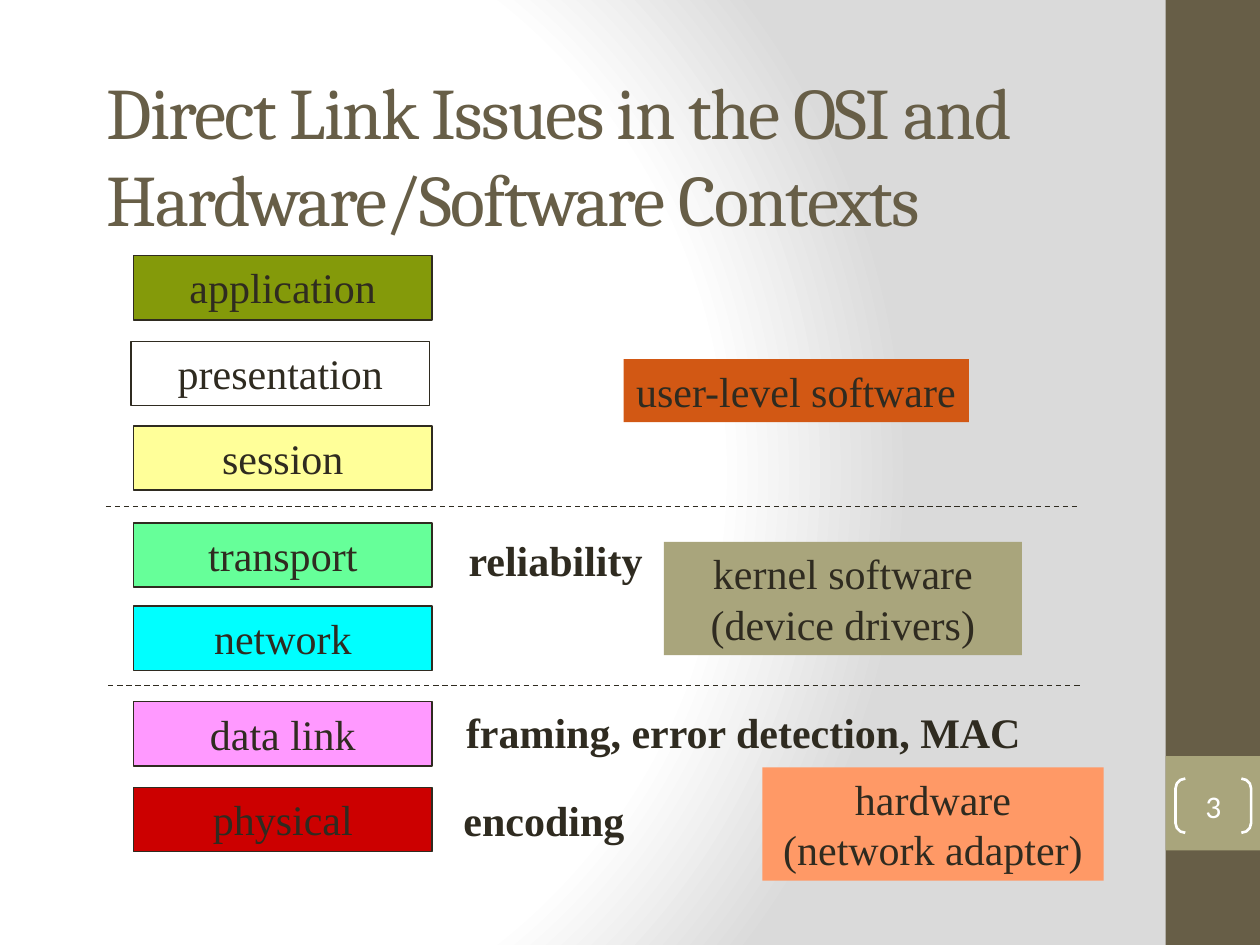
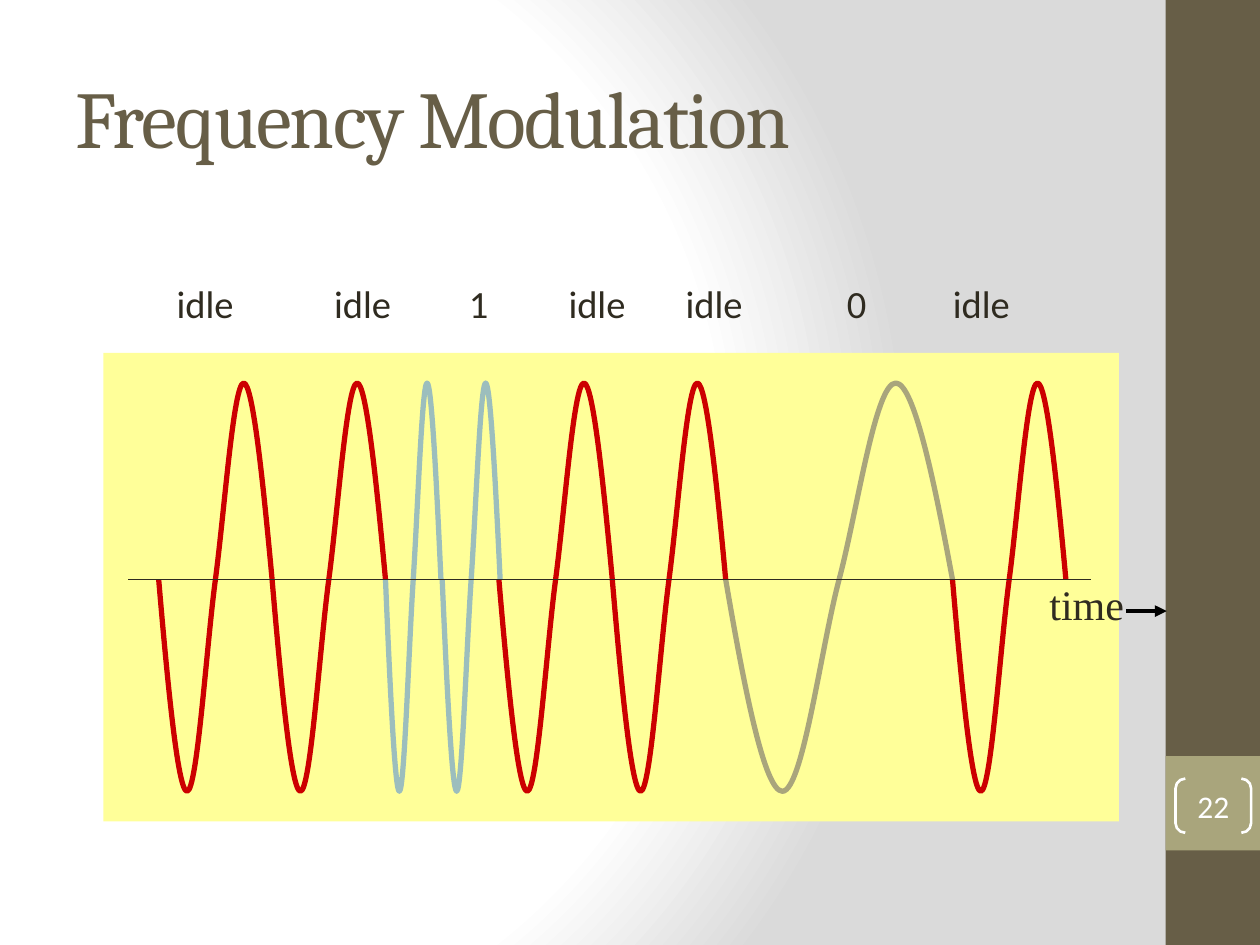
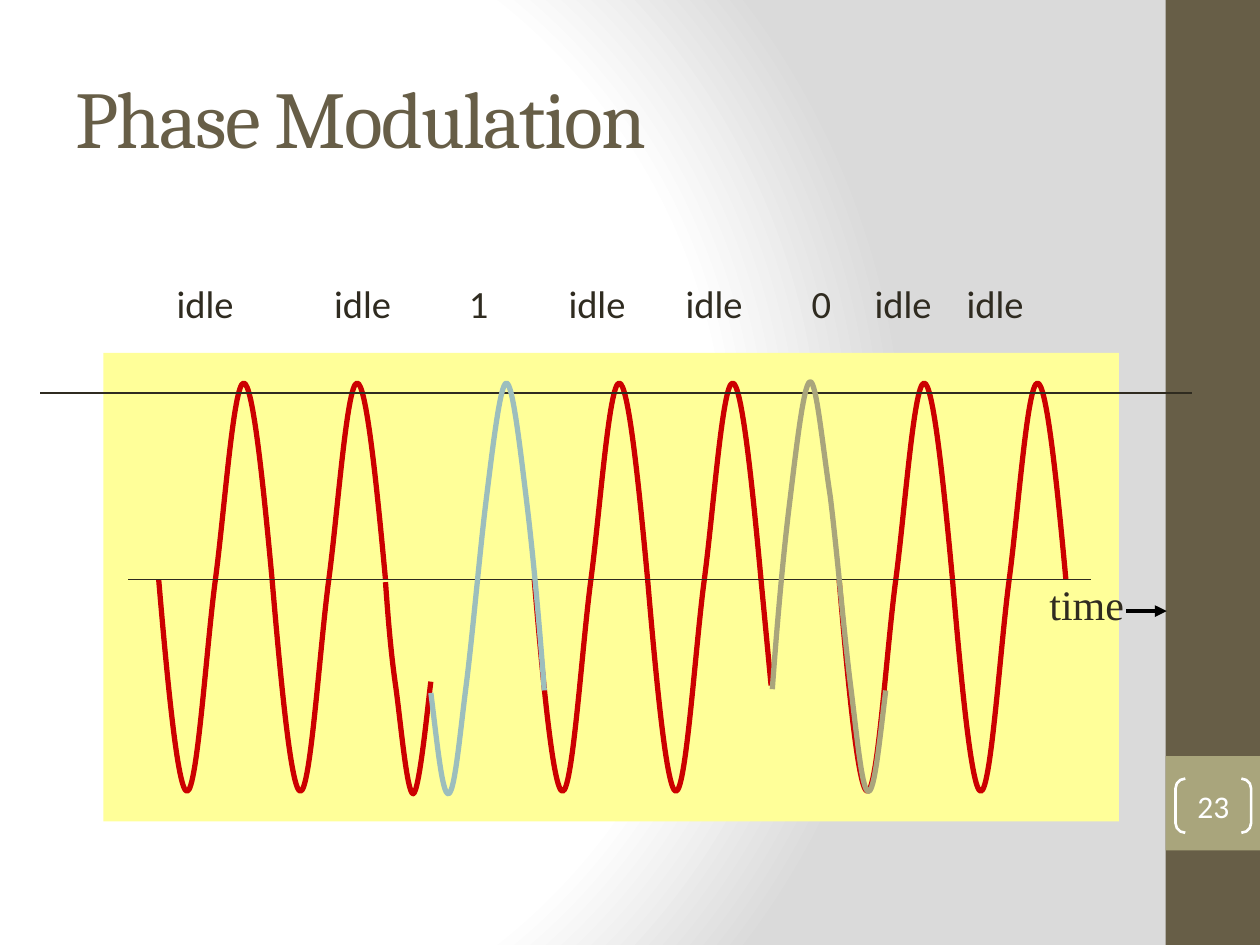
from lxml.etree import SubElement
from pptx import Presentation
from pptx.dml.color import RGBColor
from pptx.enum.dml import MSO_LINE
from pptx.enum.shapes import MSO_CONNECTOR, MSO_SHAPE
from pptx.enum.text import MSO_ANCHOR, MSO_AUTO_SIZE, PP_ALIGN
from pptx.oxml import parse_xml
from pptx.oxml.ns import nsdecls, qn
from pptx.util import Inches, Pt

# Shared colours and fonts
INK, BROWN, OLIVE, WHITE, BLACK = "2F2B20", "675E47", "A9A57C", "FFFFFF", "000000"
RED, BLUE, YELLOW = "CC0000", "9CBEBD", "FFFF99"
SERIF, SANS, HEAD = "Times New Roman", "Calibri", "Cambria"
GLOW = [(0, WHITE), (75, WHITE), (100, "DADADA")]

# Slide 1: layers (name, left, top, fill), contexts, issues, dividers
LAYERS = [
    ("transport", 1.06, 4.15, "66FF99"),
    ("network", 1.06, 4.81, "00FFFF"),
    ("data link", 1.06, 5.57, "FF99FF"),
    ("physical", 1.06, 6.25, RED),
    ("session", 1.06, 3.38, YELLOW),
    ("presentation", 1.04, 2.71, None),
    ("application", 1.06, 2.03, "849A0A"),
]
HOSTS = [
    ("kernel software (device drivers)", (5.27, 4.3, 2.84, 0.9), OLIVE),
    ("hardware (network adapter)", (6.05, 6.09, 2.71, 0.9), "FF9966"),
]
ISSUES = [
    ("reliability", (3.62, 4.19, 1.59, 0.5)),
    ("framing, error detection, MAC", (3.6, 5.56, 4.61, 0.5)),
    ("encoding", (3.58, 6.26, 1.48, 0.5)),
]
CUTS = [(0.84, 4.02), (0.86, 5.44)]

# Slides 2 and 3: signal labels with their centres
START = [("idle", 1.63), ("idle", 2.88), ("1", 3.8), ("idle", 4.74), ("idle", 5.67)]
FREQ = START + [("0", 6.8), ("idle", 7.79)]
PHASE = START + [("0", 6.52), ("idle", 7.17), ("idle", 7.9)]

# Whole waves: left, width, colour
FREQ_WAVES = [(x, 0.9, RED) for x in (1.26, 2.16, 3.96, 4.86)]
FREQ_WAVES += [(5.76, 1.8, OLIVE), (7.56, 0.9, RED), (3.06, 0.44, BLUE), (3.51, 0.46, BLUE)]
PHASE_WAVES = [(x, 0.9, RED) for x in (1.26, 2.16, 4.24, 5.14, 6.66, 7.56)]

# One wave as Bezier points: share of the width, height on the slide
WAVE = [(0, 4.6), (0.08, 5.44), (0.17, 6.28), (0.25, 6.28), (0.34, 6.28),
        (0.42, 5.14), (0.5, 4.6), (0.58, 4.06), (0.66, 3.04), (0.75, 3.04),
        (0.83, 3.04), (0.92, 3.82), (1, 4.6)]

# Waves cut by a phase shift, as Bezier points on the slide
DIP = [(3.06, 4.62), (3.08, 4.89), (3.1, 5.16), (3.14, 5.44), (3.18, 5.72),
       (3.23, 6.3), (3.28, 6.3), (3.33, 6.29), (3.4, 5.56), (3.42, 5.41)]
ONE = [(3.42, 5.5), (3.47, 5.9), (3.51, 6.31), (3.56, 6.3), (3.61, 6.29),
       (3.65, 5.83), (3.7, 5.44), (3.75, 5.05), (3.81, 4.36), (3.86, 3.96),
       (3.91, 3.56), (3.97, 3.04), (4.02, 3.04), (4.07, 3.04), (4.13, 3.57),
       (4.18, 3.98), (4.23, 4.39), (4.28, 4.93), (4.32, 5.48)]
ZERO = [(7.03, 5.48), (6.98, 5.89), (6.94, 6.3), (6.89, 6.28), (6.84, 6.27),
        (6.8, 5.82), (6.75, 5.43), (6.7, 5.03), (6.64, 4.34), (6.59, 3.94),
        (6.53, 3.55), (6.48, 3.02), (6.43, 3.03), (6.38, 3.03), (6.32, 3.56),
        (6.27, 3.97), (6.22, 4.37), (6.17, 4.92), (6.13, 5.47)]


def rgb(code):
    return RGBColor.from_string(code)


def style(shape, fill=None, line=None, width=0.75):
    shape.shadow.inherit = False
    if fill:
        shape.fill.solid()
        shape.fill.fore_color.rgb = rgb(fill)
    else:
        shape.fill.background()
    if line:
        shape.line.color.rgb = rgb(line)
        shape.line.width = Pt(width)
    else:
        shape.line.fill.background()


def write(shape, text, size=24, font=SERIF, color=INK, bold=False,
          align=PP_ALIGN.CENTER, anchor=MSO_ANCHOR.TOP, wrap=True, grow=True):
    frame = shape.text_frame
    frame.word_wrap = wrap
    frame.auto_size = MSO_AUTO_SIZE.SHAPE_TO_FIT_TEXT if grow else MSO_AUTO_SIZE.NONE
    frame.vertical_anchor = anchor
    para = frame.paragraphs[0]
    para.alignment = align
    run = para.add_run()
    run.text = text
    run.font.size, run.font.name, run.font.bold = Pt(size), font, bold
    run.font.color.rgb = rgb(color)
    return run


def box(slide, at, fill=None, line=None, width=0.75, kind=MSO_SHAPE.RECTANGLE):
    shape = slide.shapes.add_shape(kind, *map(Inches, at))
    style(shape, fill, line, width)
    return shape


def label(slide, at, text, **look):
    shape = slide.shapes.add_textbox(*map(Inches, at))
    return shape, write(shape, text, **look)


def rule(slide, start, end, color=INK, width=0.75):
    line = slide.shapes.add_connector(MSO_CONNECTOR.STRAIGHT, *map(Inches, start + end))
    line.line.color.rgb = rgb(color)
    line.line.width = Pt(width)
    SubElement(line._element.spPr, qn("a:effectLst"))
    return line


def curve(slide, pts, color):
    spots = [(Inches(x), Inches(y)) for x, y in pts]
    pen = slide.shapes.build_freeform(*spots[0])
    pen.add_line_segments(spots[1:], close=False)
    shape = pen.convert_to_shape()
    # Join each three points into one Bezier segment
    track = shape._element.find(".//" + qn("a:path"))
    steps = track.findall(qn("a:lnTo"))
    for i in range(0, len(steps), 3):
        bend = SubElement(track, qn("a:cubicBezTo"))
        for step in steps[i:i + 3]:
            bend.append(step[0])
            track.remove(step)
    style(shape, None, color, 3)


def glow(deck):
    master = deck.slide_master
    master.background.fill.solid()
    stops = "".join(f'<a:gs pos="{pos * 1000}"><a:srgbClr val="{code}"/></a:gs>'
                    for pos, code in GLOW)
    grad = parse_xml(
        f'<a:gradFill {nsdecls("a")} rotWithShape="1"><a:gsLst>{stops}</a:gsLst>'
        '<a:path path="circle"><a:fillToRect l="20000" t="50000" r="100000" b="50000"/>'
        '</a:path></a:gradFill>')
    props = master._element.find(".//" + qn("p:bgPr"))
    props.replace(props[0], grad)


def base(deck, title, number, at=(0.5, 0.3, 8.33, 1.25), size=46):
    slide = deck.slides.add_slide(deck.slide_layouts[6])
    # Side band
    box(slide, (9.25, 0, 0.75, 7.5), BROWN)
    box(slide, (9.25, 6, 0.75, 0.75), OLIVE)
    # Title
    _, run = label(slide, at, title, size=size, font=HEAD, color=BROWN,
                   align=PP_ALIGN.LEFT, anchor=MSO_ANCHOR.MIDDLE, grow=False)
    run._r.get_or_add_rPr().set("spc", "-100")
    # Page number
    mark = box(slide, (9.33, 6.18, 0.6, 0.43), None, WHITE, 1.5, MSO_SHAPE.DOUBLE_BRACKET)
    mark.adjustments[0] = 0.18
    frame = mark.text_frame
    frame.margin_left = frame.margin_right = frame.margin_top = frame.margin_bottom = 0
    write(mark, str(number), 18, SANS, WHITE, anchor=MSO_ANCHOR.MIDDLE, grow=False)
    return slide


def stack(deck):
    slide = base(deck, "Direct Link Issues in the OSI and Hardware/Software Contexts",
                 3, (0.75, 0.53, 8.5, 1.38), 41.4)
    for name, left, top, fill in LAYERS:
        write(box(slide, (left, top, 2.37, 0.51), fill, INK), name)
    for left, y in CUTS:
        rule(slide, (left, y), (left + 7.73, y)).line.dash_style = MSO_LINE.DASH
    write(box(slide, (4.95, 2.85, 2.74, 0.5), "D25814"), "user-level software",
          align=PP_ALIGN.LEFT, wrap=False)
    for name, at, fill in HOSTS:
        write(box(slide, at, fill), name)
    for name, at in ISSUES:
        label(slide, at, name, bold=True, align=PP_ALIGN.LEFT, wrap=False)


def signal(deck, title, number, labels, waves):
    slide = base(deck, title, number)
    # Labels on centred tab stops
    left = 0.97
    names = "".join("\t" + name for name, _ in labels)
    shape, _ = label(slide, (left, 2.17, 8.5, 0.64), names, size=22, font=SANS,
                     align=PP_ALIGN.LEFT, grow=False)
    props = shape.text_frame.paragraphs[0]._p.get_or_add_pPr()
    tabs = SubElement(props, qn("a:tabLst"))
    for _, mid in labels:
        SubElement(tabs, qn("a:tab"), pos=str(Inches(mid - left - 0.1)), algn="ctr")
    # Plot and time axis
    box(slide, (0.82, 2.8, 8.06, 3.72), YELLOW)
    for x, wide, color in waves:
        curve(slide, [(x + wide * part, y) for part, y in WAVE], color)
    rule(slide, (1.02, 4.6), (8.66, 4.6))
    return slide


def clock(slide):
    group = slide.shapes.add_group_shape()
    label(group, (8.23, 4.54, 0.79, 0.5), "time", wrap=False)
    arrow = rule(group, (8.94, 4.85), (9.26, 4.85), BLACK, 2.25)
    SubElement(arrow.line._get_or_add_ln(), qn("a:tailEnd"), type="triangle")


def main():
    deck = Presentation()
    deck.slide_width, deck.slide_height = Inches(10), Inches(7.5)
    glow(deck)
    stack(deck)
    clock(signal(deck, "Frequency Modulation", 22, FREQ, FREQ_WAVES))
    slide = signal(deck, "Phase Modulation", 23, PHASE, PHASE_WAVES)
    # Peak line and shifted waves
    rule(slide, (0.32, 3.12), (9.46, 3.12))
    curve(slide, DIP, RED)
    curve(slide, ONE, BLUE)
    rule(slide, (6.04, 4.6), (6.12, 5.44), RED, 3)
    curve(slide, ZERO, OLIVE)
    clock(slide)
    deck.save("out.pptx")


if __name__ == "__main__":
    main()
